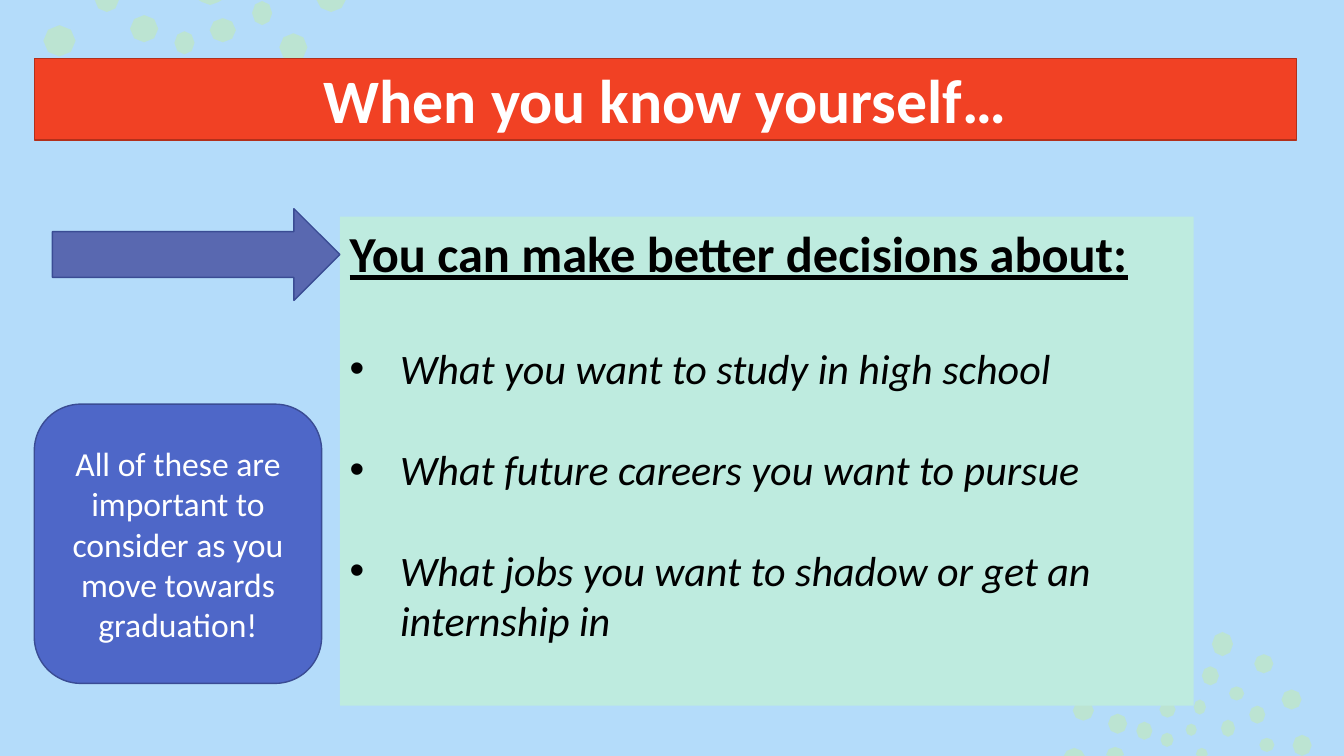
from math import cos, pi, sin

from lxml.etree import SubElement
from pptx import Presentation
from pptx.dml.color import RGBColor
from pptx.enum.shapes import MSO_SHAPE
from pptx.enum.text import MSO_ANCHOR, PP_ALIGN
from pptx.oxml.ns import qn
from pptx.util import Inches, Pt

WIDTH, HEIGHT = 13.33, 7.5

DOTS = [
    (1.97, -0.15, 2.2, 0.05), (1.73, 0.31, 1.93, 0.54), (1.63, 0.78, 1.91, 1.05),
    (1.29, 0.15, 1.57, 0.42), (2.08, 0.18, 2.34, 0.42), (2.77, 0.33, 3.05, 0.61),
    (2.5, 0.01, 2.7, 0.25), (1.05, 0.62, 1.35, 0.92), (2.22, 0.62, 2.54, 1.0),
    (3.14, -0.16, 3.43, 0.12), (12.02, 6.27, 12.23, 6.51), (11.84, 6.94, 11.96, 7.09),
    (11.6, 6.23, 11.79, 6.42), (12.44, 6.49, 12.63, 6.68), (11.15, 6.36, 11.38, 6.56),
    (0.43, 0.25, 0.75, 0.56), (0.94, -0.13, 1.18, 0.12), (11.34, 6.66, 11.52, 6.85),
    (12.82, 7.29, 13.01, 7.5), (11.86, 7.42, 11.98, 7.55), (11.92, 6.61, 12.09, 6.8),
    (11.76, 7.18, 11.87, 7.3), (12.11, 7.14, 12.25, 7.31), (12.49, 7.32, 12.64, 7.46),
    (11.66, 6.61, 11.8, 6.75), (12.71, 6.84, 12.91, 7.04), (10.55, 7.42, 10.76, 7.62),
    (12.19, 6.81, 12.34, 6.95), (12.39, 7.0, 12.55, 7.18), (11.5, 6.96, 11.66, 7.12),
    (10.97, 7.41, 11.15, 7.57), (10.64, 6.95, 10.85, 7.15), (10.99, 7.08, 11.18, 7.28),
    (10.88, 6.62, 11.06, 6.81), (11.51, 7.27, 11.64, 7.41), (11.11, 6.83, 11.28, 6.98),
    (11.27, 7.16, 11.43, 7.34),
]

DECISIONS = [
    "What you want to study in high school",
    "What future careers you want to pursue",
    "What jobs you want to shadow or get an internship in",
]


def color(hex_value):
    return RGBColor.from_string(hex_value)


class SlideBuilder:
    font_name = "Calibri"

    def __init__(self, slide):
        self.slide = slide

    def background(self, fill):
        self.slide.background.fill.solid()
        self.slide.background.fill.fore_color.rgb = color(fill)

    def paint(self, shape, fill, line=None):
        shape.shadow.inherit = False
        shape.fill.solid()
        shape.fill.fore_color.rgb = color(fill)
        if line:
            shape.line.color.rgb = color(line)
            shape.line.width = Pt(1)
        else:
            shape.line.fill.background()

    def dots(self, boxes, fill, opacity, steps=8):
        builder = None
        for left, top, right, bottom in boxes:
            points = []
            for step in range(steps):
                angle = 2 * pi * step / steps
                x = (left + right + (right - left) * cos(angle)) / 2
                y = (top + bottom + (bottom - top) * sin(angle)) / 2
                points.append((Inches(x), Inches(min(max(y, 0), HEIGHT))))
            if builder is None:
                builder = self.slide.shapes.build_freeform(*points[0])
            else:
                builder.move_to(*points[0])
            builder.add_line_segments(points[1:], close=True)
        shape = builder.convert_to_shape()
        self.paint(shape, fill)
        fill_color = shape._element.spPr.find(qn("a:solidFill"))[0]
        SubElement(fill_color, qn("a:alpha")).set("val", str(opacity * 1000))

    def shape(self, kind, left, top, width, height, fill, line=None, frame_format=None):
        shape = self.slide.shapes.add_shape(
            kind, Inches(left), Inches(top), Inches(width), Inches(height))
        self.paint(shape, fill, line)
        for name, value in {"word_wrap": True, **(frame_format or {})}.items():
            setattr(shape.text_frame, name, value)
        return shape

    def text(self, shape, words, font_color, font_format, paragraph_format):
        frame = shape.text_frame
        paragraph = frame.add_paragraph() if frame.text else frame.paragraphs[0]
        run = paragraph.add_run()
        run.text = words
        for name, value in {"name": self.font_name, **font_format}.items():
            setattr(run.font, name, value)
        run.font.color.rgb = color(font_color)
        for name, value in paragraph_format.items():
            setattr(paragraph, name, value)
        return paragraph

    def bullet(self, paragraph, indent):
        properties = paragraph._p.get_or_add_pPr()
        properties.set("marL", str(Inches(indent)))
        properties.set("indent", str(-Inches(indent)))
        SubElement(properties, qn("a:buFont")).set("typeface", "Arial")
        SubElement(properties, qn("a:buChar")).set("char", "•")


def main():
    presentation = Presentation()
    presentation.slide_width = Inches(WIDTH)
    presentation.slide_height = Inches(HEIGHT)
    builder = SlideBuilder(presentation.slides.add_slide(presentation.slide_layouts[6]))

    builder.background("B4DCFA")
    builder.dots(DOTS, "CAF297", 40)

    title = builder.shape(
        MSO_SHAPE.RECTANGLE, 0.34, 0.58, 12.52, 0.81, "F14124", "B2301B",
        {"vertical_anchor": MSO_ANCHOR.BOTTOM, "margin_top": 0,
         "margin_bottom": Inches(0.04)})
    builder.text(title, "When you know yourself…", "FFFFFF",
                 {"size": Pt(44.1), "bold": True}, {"alignment": PP_ALIGN.CENTER})

    body = builder.shape(MSO_SHAPE.RECTANGLE, 3.37, 2.15, 8.47, 4.85, "BEEBDF",
                         frame_format={"vertical_anchor": MSO_ANCHOR.TOP})
    builder.text(body, "You can make better decisions about:", "000000",
                 {"size": Pt(36), "bold": True, "underline": True},
                 {"alignment": PP_ALIGN.LEFT, "space_after": Pt(7.3)})
    for decision in DECISIONS:
        paragraph = builder.text(
            body, decision, "000000", {"size": Pt(30), "italic": True},
            {"alignment": PP_ALIGN.LEFT, "space_before": Pt(36)})
        builder.bullet(paragraph, 0.5)

    builder.shape(MSO_SHAPE.RIGHT_ARROW, 0.52, 2.07, 2.85, 0.91, "5968B0", "3A4C94")

    reminder = builder.shape(
        MSO_SHAPE.FLOWCHART_ALTERNATE_PROCESS, 0.34, 4.01, 2.85, 2.77, "4E67C8", "3A4C94",
        {"vertical_anchor": MSO_ANCHOR.MIDDLE})
    builder.text(
        reminder,
        "All of these are important to consider as you move towards graduation!",
        "FFFFFF", {"size": Pt(24)}, {"alignment": PP_ALIGN.CENTER})

    presentation.save("out.pptx")


if __name__ == "__main__":
    main()
